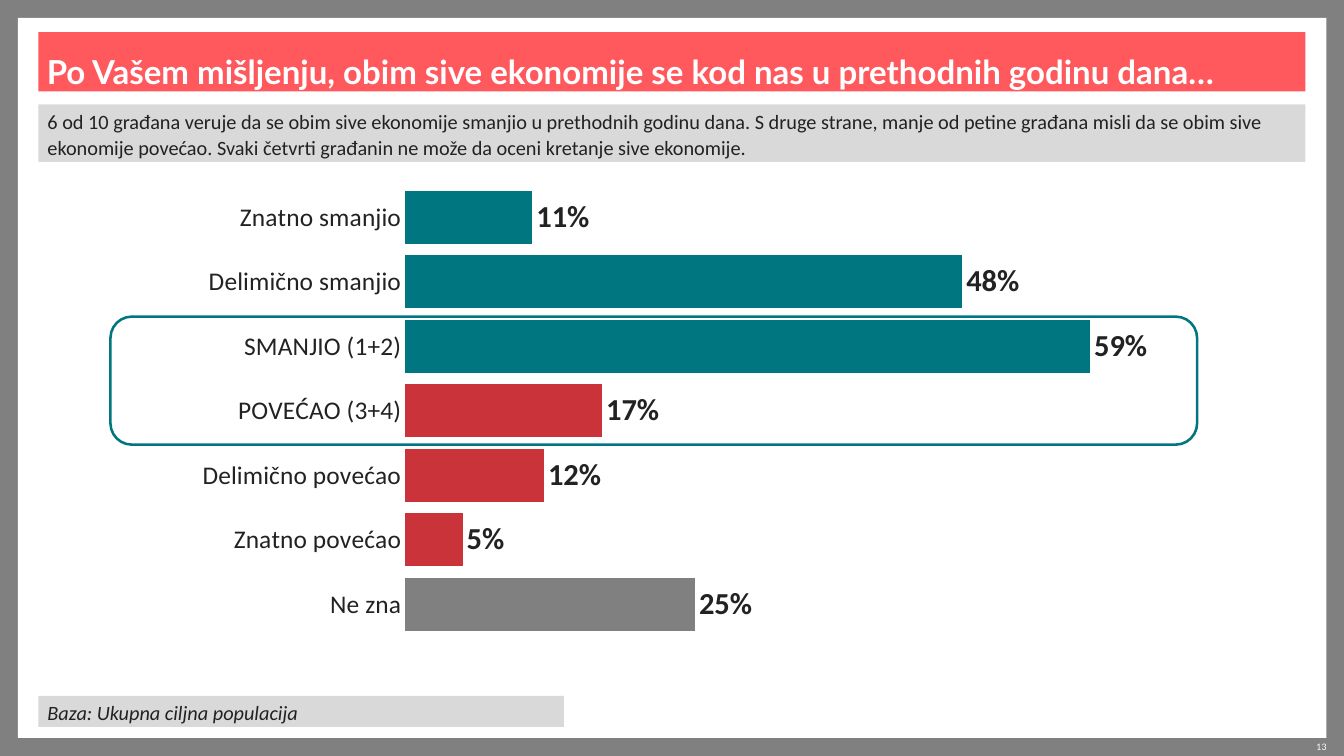
from dataclasses import dataclass

from pptx import Presentation
from pptx.chart.data import CategoryChartData
from pptx.dml.color import RGBColor
from pptx.enum.chart import XL_CHART_TYPE, XL_LABEL_POSITION, XL_TICK_MARK
from pptx.enum.shapes import MSO_SHAPE
from pptx.enum.text import MSO_ANCHOR, PP_ALIGN
from pptx.oxml import parse_xml
from pptx.oxml.ns import nsdecls
from pptx.util import Cm, Pt

RECT, ROUNDED = MSO_SHAPE.RECTANGLE, MSO_SHAPE.ROUNDED_RECTANGLE
LEFT, RIGHT = PP_ALIGN.LEFT, PP_ALIGN.RIGHT
MIDDLE = MSO_ANCHOR.MIDDLE
BAR = XL_CHART_TYPE.BAR_CLUSTERED
OUTSIDE_END = XL_LABEL_POSITION.OUTSIDE_END
NO_TICK = XL_TICK_MARK.NONE


@dataclass(frozen=True)
class Theme:
    white: str = "FFFFFF"
    ink: str = "222223"
    grey: str = "808080"
    band: str = "D9D9D9"
    coral: str = "FF585D"
    teal: str = "007681"
    red: str = "CB333B"
    head_font: str = "Lato"
    body_font: str = "Calibri"
    title: int = 26
    body: int = 16
    number: int = 7
    category: int = 20
    value: int = 24


T = Theme()

ANSWERS = [
    ("Znatno smanjio", 11, T.teal),
    ("Delimično smanjio", 48, T.teal),
    ("SMANJIO (1+2)", 59, T.teal),
    ("POVEĆAO (3+4)", 17, T.red),
    ("Delimično povećao", 12, T.red),
    ("Znatno povećao", 5, T.red),
    ("Ne zna", 25, T.grey),
]
TOTAL_ROWS = (2, 3)
PLOT = {"x": 0.267, "y": 0.001, "w": 0.72, "h": 0.999}
AXIS_MAX = 70

TITLE = "Po Vašem mišljenju, obim sive ekonomije se kod nas u prethodnih godinu dana…"
SUMMARY = (
    "6 od 10 građana veruje da se obim sive ekonomije smanjio u prethodnih godinu dana. "
    "S druge strane, manje od petine građana misli da se obim sive ekonomije povećao. "
    "Svaki četvrti građanin ne može da oceni kretanje sive ekonomije."
)


def rgb(color):
    return RGBColor.from_string(color)


def cm(box):
    return [Cm(v) for v in box]


def set_font(font, size, color=T.ink, name=T.body_font, bold=False, italic=False):
    font.size, font.name = Pt(size), name
    font.bold, font.italic = bold, italic
    font.color.rgb = rgb(color)


def write(shape, text, margins=(0.25, 0, 0.25, 0), align=LEFT, spacing=1.1, gap=0, **font):
    tf = shape.text_frame
    tf.word_wrap, tf.vertical_anchor = True, MIDDLE
    tf.margin_left, tf.margin_top, tf.margin_right, tf.margin_bottom = cm(margins)
    p = tf.paragraphs[0]
    p.alignment, p.line_spacing = align, spacing
    p.space_before = p.space_after = Pt(gap)
    r = p.add_run()
    r.text = text
    set_font(r.font, **font)


def add_box(s, box, kind=RECT, fill=None, line=None):
    sp = s.shapes.add_shape(kind, *cm(box))
    sp.shadow.inherit = False
    if fill:
        sp.fill.solid()
        sp.fill.fore_color.rgb = rgb(fill)
    else:
        sp.fill.background()
    if line:
        sp.line.color.rgb = rgb(line)
        sp.line.width = Pt(2)
    else:
        sp.line.fill.background()
    return sp


def add_page(s, box, number):
    """White sheet on a grey background, with the page number under its right corner."""
    s.background.fill.solid()
    s.background.fill.fore_color.rgb = rgb(T.grey)
    add_box(s, box, fill=T.white)
    x, y, w, h = box
    tb = s.shapes.add_textbox(*cm((x + w - 1.99, y + h + 0.07, 2, 0.33)))
    write(tb, number, margins=(0, 0, 0, 0), align=RIGHT,
          size=T.number, color=T.white, name=T.head_font)


def add_title(s, box):
    write(add_box(s, box, fill=T.coral), TITLE, margins=(0.23, 0.2, 0.23, 0),
          spacing=Pt(41), size=T.title, color=T.white, name=T.head_font, bold=True)


def add_band(s, box, text, italic=False):
    write(add_box(s, box, fill=T.band), text, gap=6, size=T.body, italic=italic)


def set_plot_area(chart):
    edges = "".join(f'<c:{k} val="{v}"/>' for k, v in PLOT.items())
    layout = parse_xml(
        f'<c:layout {nsdecls("c")}><c:manualLayout><c:layoutTarget val="inner"/>'
        f'<c:xMode val="edge"/><c:yMode val="edge"/>{edges}</c:manualLayout></c:layout>')
    plot_area = chart.plots[0]._element.getparent()
    for old in plot_area.findall(layout.tag):
        plot_area.remove(old)
    plot_area.insert(0, layout)


def style_axes(chart):
    cat, val = chart.category_axis, chart.value_axis
    cat.reverse_order = True
    cat.major_tick_mark = NO_TICK
    cat.format.line.fill.background()
    set_font(cat.tick_labels.font, T.category)
    val.minimum_scale, val.maximum_scale = 0, AXIS_MAX
    val.has_major_gridlines = False
    val.visible = False


def style_bars(plot):
    plot.gap_width, plot.vary_by_categories = 20, False
    series = plot.series[0]
    formats = [series.format] + [series.points[i].format for i, (_, _, color)
                                 in enumerate(ANSWERS) if color != T.teal]
    colors = [T.teal] + [color for _, _, color in ANSWERS if color != T.teal]
    for fmt, color in zip(formats, colors):
        fmt.fill.solid()
        fmt.fill.fore_color.rgb = rgb(color)
        fmt.line.color.rgb = rgb(T.white)
        fmt.line.width = Pt(0.75)
    labels = series.data_labels
    labels.show_value, labels.position = True, OUTSIDE_END
    labels.number_format, labels.number_format_is_linked = '#"%"', False
    set_font(labels.font, T.value, bold=True)


def add_answers(s, box):
    """Bar chart of the answers, with a frame round the two total rows."""
    data = CategoryChartData()
    data.categories = [name for name, _, _ in ANSWERS]
    data.add_series("Series 1", [value for _, value, _ in ANSWERS])
    chart = s.shapes.add_chart(BAR, *cm(box), data).chart
    chart.has_legend = chart.has_title = False
    set_font(chart.font, 18, name=T.head_font)
    set_plot_area(chart)
    style_axes(chart)
    style_bars(chart.plots[0])

    x, y, w, h = box
    row = h / len(ANSWERS)
    top = y + TOTAL_ROWS[0] * row + 0.08
    frame = (x + 0.2, top, w - 1.2, len(TOTAL_ROWS) * row - 0.03)
    add_box(s, frame, kind=ROUNDED, line=T.teal)


def main():
    prs = Presentation()
    prs.slide_width, prs.slide_height = Cm(37.34), Cm(21)
    s = prs.slides.add_slide(prs.slide_layouts[6])
    left, width = 1.07, 35.2
    add_page(s, (0.5, 0.5, 36.35, 20), "13")
    add_title(s, (left, 0.89, width, 1.65))
    add_band(s, (left, 19.33, 14.6, 0.86), "Baza: Ukupna ciljna populacija", italic=True)
    add_band(s, (left, 2.9, width, 1.6), SUMMARY)
    add_answers(s, (2.87, 5.13, 31.39, 12.55))
    prs.save("out.pptx")


if __name__ == "__main__":
    main()
